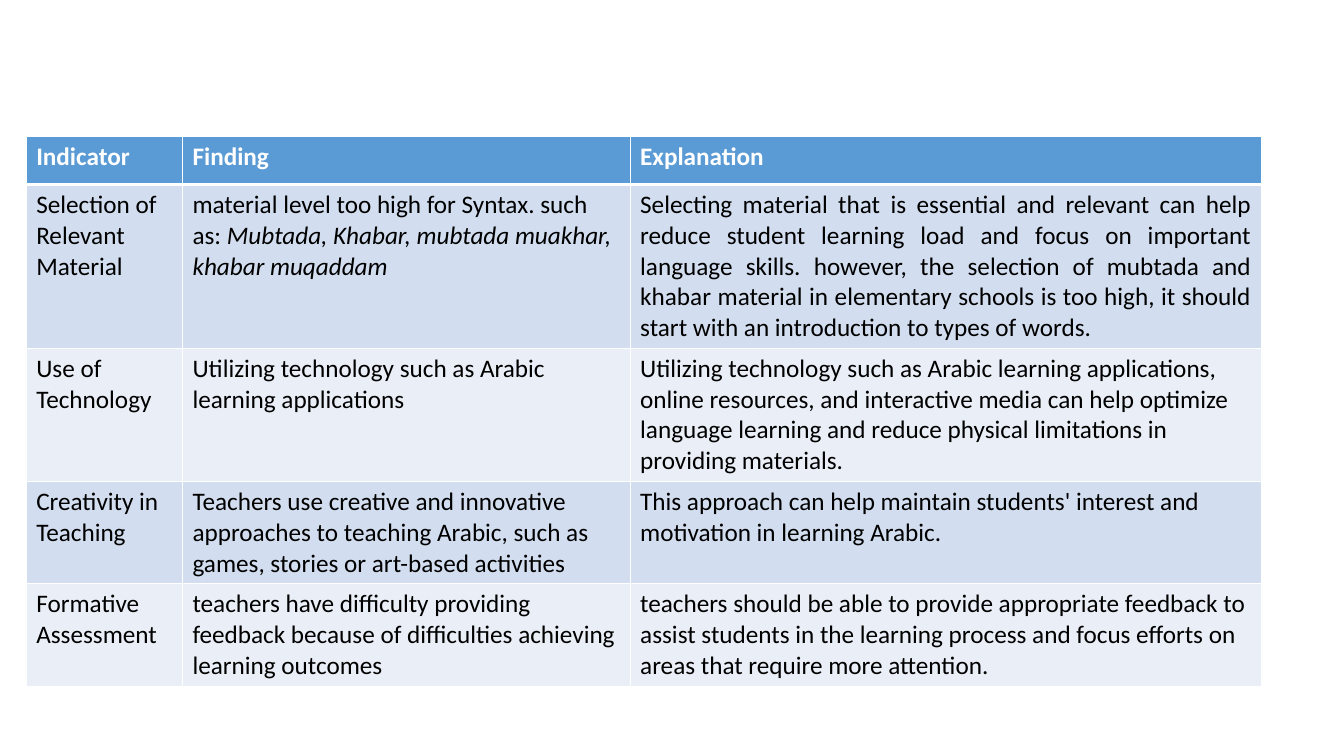
from lxml import etree
from pptx import Presentation
from pptx.dml.color import RGBColor
from pptx.enum.text import PP_ALIGN
from pptx.oxml.ns import qn
from pptx.util import Inches, Pt

JUSTIFY = PP_ALIGN.JUSTIFY

WHITE = RGBColor(0xFF, 0xFF, 0xFF)
BLACK = RGBColor(0x00, 0x00, 0x00)
HEADER_BLUE = RGBColor(0x5B, 0x9B, 0xD5)
BAND_BLUES = (RGBColor(0xD2, 0xDE, 0xEF), RGBColor(0xEA, 0xEF, 0xF7))
FONT = "Calibri"

# Content
SYNTAX_TERMS = "Mubtada, Khabar, mubtada muakhar, khabar muqaddam"
HEADER = ("Indicator", "Finding", "Explanation")
FINDINGS = [
    ("Selection of Relevant Material",
     "material level too high for Syntax. such as: ",
     "Selecting material that is essential and relevant can help reduce student "
     "learning load and focus on important language skills. however, the selection "
     "of mubtada and khabar material in elementary schools is too high, it should "
     "start with an introduction to types of words."),
    ("Use of Technology",
     "Utilizing technology such as Arabic learning applications",
     "Utilizing technology such as Arabic learning applications, online resources, "
     "and interactive media can help optimize language learning and reduce physical "
     "limitations in providing materials."),
    ("Creativity in Teaching",
     "Teachers use creative and innovative approaches to teaching Arabic, such as "
     "games, stories or art-based activities",
     "This approach can help maintain students' interest and motivation in learning "
     "Arabic."),
    ("Formative Assessment",
     "teachers have difficulty providing feedback because of difficulties achieving "
     "learning outcomes",
     "teachers should be able to provide appropriate feedback to assist students in "
     "the learning process and focus efforts on areas that require more attention."),
]
COLUMN_WIDTHS = (1.55, 4.44, 6.26)
ROW_HEIGHTS = (0.48, 1.62, 1.32, 1.01, 1.01)


def rule_below(cell, width, color):
    """Draw a line along the bottom edge of a cell."""
    edge = etree.Element(qn("a:lnB"), w=str(Pt(width)))
    fill = etree.SubElement(edge, qn("a:solidFill"))
    etree.SubElement(fill, qn("a:srgbClr"), val=str(color))
    cell._tc.get_or_add_tcPr().insert(0, edge)


prs = Presentation()
prs.slide_width, prs.slide_height = Inches(13.33), Inches(7.5)
slide = prs.slides.add_slide(prs.slide_layouts[6])

# Findings table
rows = [HEADER] + FINDINGS
findings = slide.shapes.add_table(
    len(rows), len(HEADER), Inches(0.26), Inches(1.35),
    Inches(sum(COLUMN_WIDTHS)), Inches(sum(ROW_HEIGHTS))).table
for column, width in zip(findings.columns, COLUMN_WIDTHS):
    column.width = Inches(width)
for row, height in zip(findings.rows, ROW_HEIGHTS):
    row.height = Inches(height)

for r, texts in enumerate(rows):
    is_header = r == 0
    for c, text in enumerate(texts):
        cell = findings.cell(r, c)
        cell.fill.solid()
        cell.fill.fore_color.rgb = HEADER_BLUE if is_header else BAND_BLUES[(r - 1) % 2]
        if is_header:
            rule_below(cell, 3, WHITE)
        cell.text_frame.text = text
        paragraph = cell.text_frame.paragraphs[0]
        if (r, c) == (1, 1):
            terms = paragraph.add_run()
            terms.text = SYNTAX_TERMS
            terms.font.italic = True
        for run in paragraph.runs:
            run.font.name = FONT
            run.font.size = Pt(18)
            run.font.color.rgb = WHITE if is_header else BLACK
            run.font.bold = is_header

# The long first explanation is set justified
findings.cell(1, 2).text_frame.paragraphs[0].alignment = JUSTIFY

prs.save("out.pptx")
